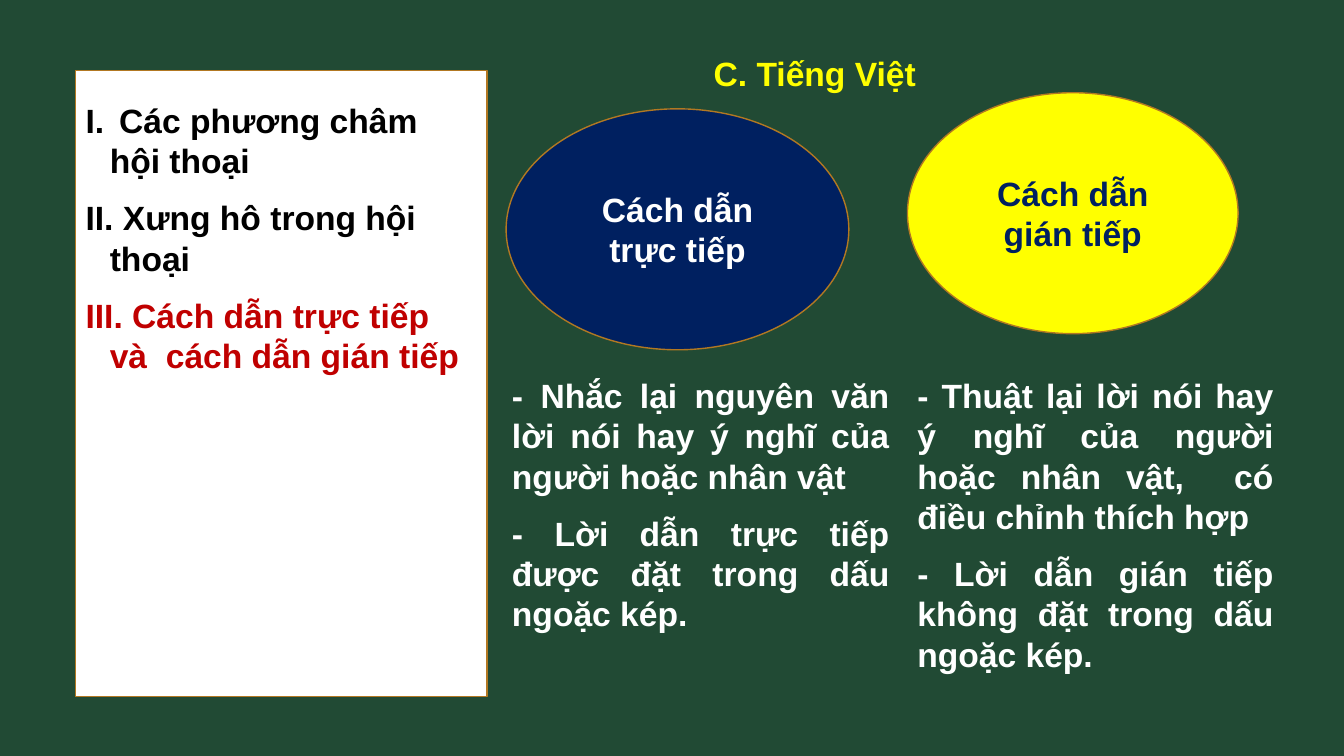
from lxml import etree
from pptx import Presentation, util as u
from pptx.dml.color import RGBColor
from pptx.enum import shapes, text
from pptx.oxml.ns import qn

WIDE, HIGH = u.Inches(13.33), u.Inches(7.5)
HUES = {"board": "214A34", "white": "FFFFFF", "black": "000000", "red": "C00000",
        "navy": "002060", "yellow": "FFFF00", "edge": "B27822"}
LEFT, MID = text.PP_ALIGN.LEFT, text.PP_ALIGN.CENTER
FULL = text.PP_ALIGN.JUSTIFY
TOPICS = [(" Các phương châm hội thoại", "black"),
          (" Xưng hô trong hội thoại", "black"),
          (" Cách dẫn trực tiếp và  cách dẫn gián tiếp", "red")]
KINDS = [
    ("Cách dẫn trực tiếp", "navy", "white",
     (37.66, 14.4, 25.5, 31.87), (37.36, 48.93, 29.56, 43.47),
     ["- Nhắc lại nguyên văn lời nói hay ý nghĩ của người hoặc nhân vật ",
      "- Lời dẫn trực tiếp được đặt trong dấu ngoặc kép."]),
    ("Cách dẫn gián tiếp", "yellow", "navy",
     (67.52, 12.27, 24.6, 31.87), (67.52, 48.93, 27.98, 41.33),
     ["- Thuật lại lời nói hay ý nghĩ của người hoặc nhân vật,  có điều chỉnh thích hợp",
      "- Lời dẫn gián tiếp không đặt trong dấu ngoặc kép."]),
]


def hue(name):
    """Return a named colour."""
    return RGBColor.from_string(HUES[name])


def place(area):
    """Turn percentages of the slide into lengths."""
    return [int(share * side / 100) for share, side in zip(area, (WIDE, HIGH) * 2)]


def number(para):
    """Give a paragraph a Roman number and a hanging indent."""
    props = para._p.get_or_add_pPr()
    props.set("marL", str(u.Inches(0.24)))
    props.set("indent", str(-u.Inches(0.24)))
    etree.SubElement(props, qn("a:buAutoNum"), type="romanUcPeriod")


def write(frame, lines, align=LEFT, gap=0, roman=False):
    """Fill a text frame with (words, colour) lines."""
    frame.word_wrap = True
    for i, (words, tint) in enumerate(lines):
        para = frame.add_paragraph() if i else frame.paragraphs[0]
        para.text = words
        para.alignment = align
        if roman:
            number(para)
        para.space_before = para.space_after = u.Pt(gap)
        font = para.font
        font.name, font.size, font.bold = "Arial", u.Pt(24), True
        font.color.rgb = hue(tint)
    return frame


def label(slide, area, lines, **style):
    """Add a text box."""
    return write(slide.shapes.add_textbox(*place(area)).text_frame, lines, **style)


def block(slide, kind, area, fill):
    """Add a filled shape with a thin edge."""
    shape = slide.shapes.add_shape(kind, *place(area))
    shape.shadow.inherit = False
    shape.fill.solid()
    shape.fill.fore_color.rgb = hue(fill)
    shape.line.color.rgb = hue("edge")
    shape.line.width = u.Pt(1)
    return shape


def main():
    """Build the slide."""
    deck = Presentation()
    deck.slide_width, deck.slide_height = WIDE, HIGH
    slide = deck.slides.add_slide(deck.slide_layouts[6])
    slide.background.fill.solid()
    slide.background.fill.fore_color.rgb = hue("board")

    block(slide, shapes.MSO_SHAPE.RECTANGLE, (5.63, 9.33, 30.6, 82.8), "white")
    label(slide, (5.63, 12.53, 30.3, 38.13), TOPICS, gap=6, roman=True)
    title = label(slide, (52.36, 6.93, 24.23, 19.33), [("C. Tiếng Việt", "yellow")])
    title.paragraphs[0].line_spacing = 0.9

    for name, fill, ink, oval, body, notes in KINDS:
        shape = block(slide, shapes.MSO_SHAPE.OVAL, oval, fill)
        frame = write(shape.text_frame, [(name, ink)], align=MID)
        frame.vertical_anchor = text.MSO_ANCHOR.MIDDLE
        label(slide, body, [(note, "white") for note in notes], align=FULL, gap=6)

    deck.save("out.pptx")


if __name__ == "__main__":
    main()
